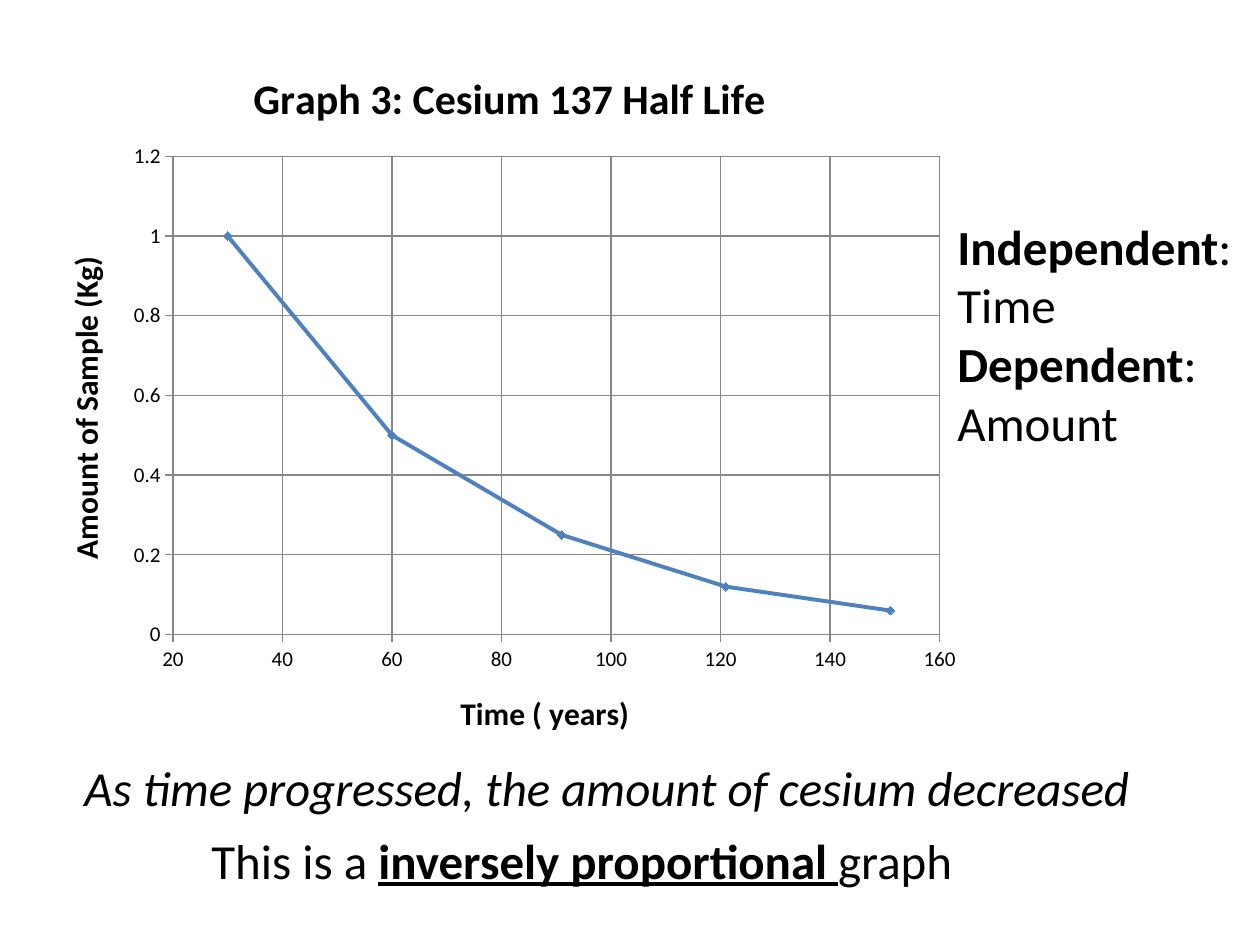
from lxml import etree
from pptx import Presentation
from pptx.chart.data import XyChartData
from pptx.dml.color import RGBColor
from pptx.enum.chart import XL_CHART_TYPE, XL_MARKER_STYLE, XL_TICK_MARK
from pptx.oxml.ns import qn
from pptx.util import Emu, Pt

SMOOTH_SCATTER = XL_CHART_TYPE.XY_SCATTER_SMOOTH
DIAMOND = XL_MARKER_STYLE.DIAMOND
TICK_OUTSIDE = XL_TICK_MARK.OUTSIDE
TICK_NONE = XL_TICK_MARK.NONE
BLANK_LAYOUT = 6
EMU_PER_PX = 914400 / 126
FONT = "Calibri"
BLACK, GRID_GREY, CURVE_BLUE = "000000", "878787", "4F81BD"
DECAY = [(30, 1), (60, 0.5), (91, 0.25), (121, 0.12), (151, 0.06)]
PLOT_AREA = {"x": 0.14, "y": 0.16, "w": 0.82, "h": 0.67}


def px(length):
    """Turn pixels into EMU."""
    return Emu(round(length * EMU_PER_PX))


def colour(value):
    """Turn a hex string into a colour."""
    return RGBColor.from_string(value)


def style_font(font, size, bold=False, italic=False, underline=False):
    """Set the typeface, size, colour and emphasis of a font."""
    font.name = FONT
    font.size = Pt(size)
    font.color.rgb = colour(BLACK)
    font.bold = bold
    font.italic = italic
    font.underline = underline


def add_note(slide, box, paragraphs):
    """Add unwrapped text from paragraphs of (text, emphasis) runs."""
    frame = slide.shapes.add_textbox(*map(px, box)).text_frame
    frame.word_wrap = False
    for index, runs in enumerate(paragraphs):
        paragraph = frame.add_paragraph() if index else frame.paragraphs[0]
        for text, emphasis in runs:
            run = paragraph.add_run()
            run.text = text
            style_font(run.font, 28, **emphasis)


def set_title(titled, text, size):
    """Write a bold title on a chart or an axis."""
    run = titled.text_frame.paragraphs[0].add_run()
    run.text = text
    style_font(run.font, size, bold=True)


def style_axis(axis, title, low, high, step):
    """Set the title, scale, ticks and gridlines of an axis."""
    set_title(axis.axis_title, title, 18)
    axis.minimum_scale, axis.maximum_scale, axis.major_unit = low, high, step
    axis.major_tick_mark, axis.minor_tick_mark = TICK_OUTSIDE, TICK_NONE
    axis.has_major_gridlines = True
    for line in (axis.format.line, axis.major_gridlines.format.line):
        line.color.rgb = colour(GRID_GREY)
        line.width = Pt(0.75)
    style_font(axis.tick_labels.font, 12)
    axis.tick_labels.number_format = "General"
    axis.tick_labels.number_format_is_linked = False


def place_plot(chart):
    """Fix the inner plot area as fractions of the chart."""
    plot_area = chart.element.find(".//" + qn("c:plotArea"))
    for automatic in plot_area.findall(qn("c:layout")):
        plot_area.remove(automatic)
    layout = etree.Element(qn("c:layout"))
    plot_area.insert(0, layout)
    manual = etree.SubElement(layout, qn("c:manualLayout"))
    settings = {"layoutTarget": "inner", "xMode": "edge", "yMode": "edge", **PLOT_AREA}
    for name, value in settings.items():
        etree.SubElement(manual, qn("c:" + name)).set("val", str(value))


def add_decay_chart(slide, box):
    """Add the smooth curve of sample amount over time."""
    data = XyChartData()
    samples = data.add_series("Series 1")
    for years, amount in DECAY:
        samples.add_data_point(years, amount)
    chart = slide.shapes.add_chart(SMOOTH_SCATTER, *map(px, box), data).chart
    style_font(chart.font, 10)
    chart.has_legend = False
    chart.has_title = True
    set_title(chart.chart_title, "Graph 3: Cesium 137 Half Life", 24)
    style_axis(chart.category_axis, "Time ( years)", 20, 160, 20)
    style_axis(chart.value_axis, "Amount of Sample (Kg)", 0, 1.2, 0.2)
    place_plot(chart)
    chart.plots[0].vary_by_categories = False
    curve = chart.plots[0].series[0]
    curve.smooth = True
    curve.format.line.color.rgb = colour(CURVE_BLUE)
    curve.format.line.width = Pt(2.25)
    curve.marker.style = DIAMOND
    curve.marker.size = 5
    curve.marker.format.fill.solid()
    curve.marker.format.fill.fore_color.rgb = colour(CURVE_BLUE)
    curve.marker.format.line.color.rgb = colour(CURVE_BLUE)


def main():
    """Build the half-life slide."""
    presentation = Presentation()
    presentation.slide_width, presentation.slide_height = px(1260), px(945)
    slide = presentation.slides.add_slide(presentation.slide_layouts[BLANK_LAYOUT])
    plain, bold = {}, {"bold": True}
    add_decay_chart(slide, (42, 42, 935, 714))
    add_note(slide, (945, 210, 314, 251), [
        [("Independent", bold), (":", plain)],
        [("Time", plain)],
        [("Dependent", bold), (":", plain)],
        [("Amount", plain)],
    ])
    add_note(slide, (199, 824, 775, 72), [[
        ("This is a ", plain),
        ("inversely proportional ", {"bold": True, "underline": True}),
        ("graph", plain),
    ]])
    add_note(slide, (72, 751, 1082, 72), [
        [("As time progressed, the amount of cesium decreased", {"italic": True})],
    ])
    presentation.save("out.pptx")


if __name__ == "__main__":
    main()
